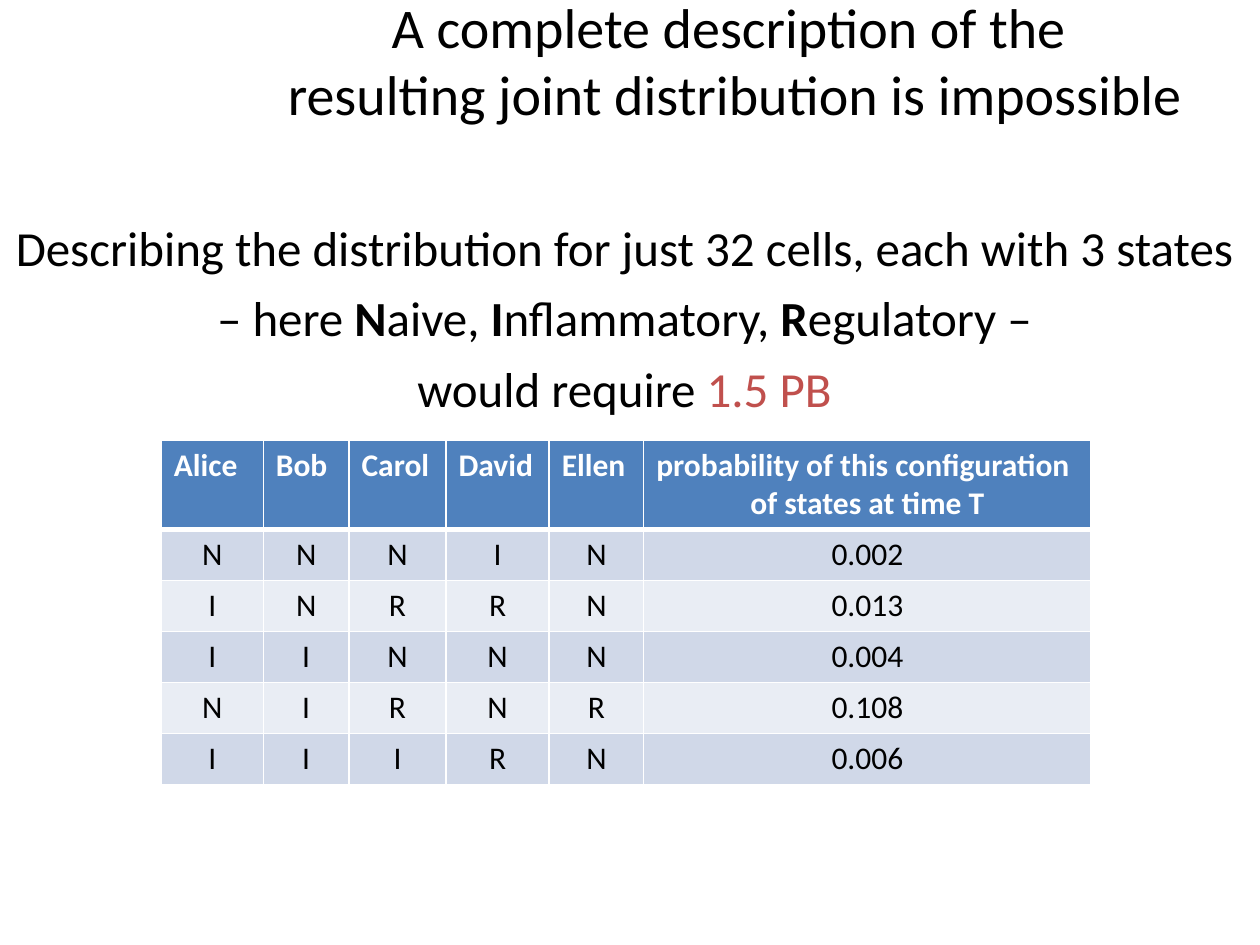
"""Build the slide on describing the joint distribution of cell states."""
import pptx
import pptx.dml.color
import pptx.enum.text
import pptx.oxml
import pptx.oxml.ns
import pptx.util

Inches, Pt = pptx.util.Inches, pptx.util.Pt
CENTER = pptx.enum.text.PP_ALIGN.CENTER
ANCHOR = pptx.enum.text.MSO_ANCHOR
BLACK, WHITE, RED = "000000", "FFFFFF", "C0504D"
HEADER_FILL, BAND_FILLS = "4F81BD", ("D0D8E8", "E9EDF4")

TITLE_LINES = ["A complete description of the ", "resulting joint distribution is impossible"]
BODY_LINES = [
    [("Describing the distribution for just 32 cells, each with 3 states ", False, BLACK)],
    [("– here ", False, BLACK), ("N", True, BLACK), ("aive,", False, BLACK),
     (" I", True, BLACK), ("nflammatory, ", False, BLACK), ("R", True, BLACK),
     ("egulatory – ", False, BLACK)],
    [("would require ", False, BLACK), ("1.5 PB ", False, RED)],
]
HEADERS = ["Alice", "Bob", "Carol", "David", "Ellen",
           "probability of this configuration\nof states at time T"]
CONFIGURATIONS = [
    ("NNNIN", "0.002"),
    ("INRRN", "0.013"),
    ("IINNN", "0.004"),
    ("NIRNR", "0.108"),
    ("IIIRN", "0.006"),
]
COLUMN_WIDTHS = [0.81, 0.68, 0.77, 0.82, 0.75, 3.55]
HEADER_HEIGHT, ROW_HEIGHT = 0.7, 0.4


def rgb(value):
    return pptx.dml.color.RGBColor.from_string(value)


def style(font, size, color, bold=False):
    font.name, font.size, font.bold = "Calibri", Pt(size), bold
    font.color.rgb = rgb(color)


def place(holder, left, top, width, height, anchor):
    holder.left, holder.top = Inches(left), Inches(top)
    holder.width, holder.height = Inches(width), Inches(height)
    frame = holder.text_frame
    frame.word_wrap = True
    frame.auto_size = pptx.enum.text.MSO_AUTO_SIZE.NONE
    frame.vertical_anchor = anchor
    return frame.paragraphs[0]


def add_borders(cell, bottom_width):
    properties = cell._tc.get_or_add_tcPr()
    widths = {"lnL": 1, "lnR": 1, "lnT": 1, "lnB": bottom_width}
    for index, (side, width) in enumerate(widths.items()):
        properties.insert(index, pptx.oxml.parse_xml(
            f'<a:{side} {pptx.oxml.ns.nsdecls("a")} w="{Pt(width)}"><a:solidFill>'
            f'<a:srgbClr val="{WHITE}"/></a:solidFill></a:{side}>'))


def fill_cell(cell, text, fill, color, is_header):
    cell.fill.solid()
    cell.fill.fore_color.rgb = rgb(fill)
    cell.text = text
    for index, paragraph in enumerate(cell.text_frame.paragraphs):
        style(paragraph.font, 18, color, is_header)
        if index or not is_header:
            paragraph.alignment = CENTER
    add_borders(cell, 3 if is_header else 1)


def add_title(slide):
    title = place(slide.shapes.title, 1.67, 0, 8.33, 0.94, ANCHOR.MIDDLE)
    title.text = "\v".join(TITLE_LINES)
    title.alignment = CENTER
    style(title.font, 32, BLACK)


def add_body(slide):
    body = place(slide.placeholders[1], 0, 1.58, 10, 1.86, ANCHOR.TOP)
    body.alignment, body.line_spacing, body.space_before = CENTER, 1.2, Pt(0)
    properties = body._p.get_or_add_pPr()
    properties.set("marL", "0")
    properties.set("indent", "0")
    properties.append(pptx.oxml.parse_xml(f'<a:buNone {pptx.oxml.ns.nsdecls("a")}/>'))
    style(body.font, 28, BLACK)
    for index, line in enumerate(BODY_LINES):
        if index:
            body.add_line_break()
        for text, bold, color in line:
            run = body.add_run()
            run.text = text
            style(run.font, 28, color, bold)


def add_probabilities(slide):
    rows = [HEADERS] + [[*states, chance] for states, chance in CONFIGURATIONS]
    height = HEADER_HEIGHT + ROW_HEIGHT * len(CONFIGURATIONS)
    table = slide.shapes.add_table(
        len(rows), len(HEADERS), Inches(1.28), Inches(3.49),
        Inches(sum(COLUMN_WIDTHS)), Inches(height)).table
    for column, width in zip(table.columns, COLUMN_WIDTHS):
        column.width = Inches(width)
    for r, row in enumerate(rows):
        is_header = r == 0
        table.rows[r].height = Inches(HEADER_HEIGHT if is_header else ROW_HEIGHT)
        fill = HEADER_FILL if is_header else BAND_FILLS[(r - 1) % 2]
        for c, text in enumerate(row):
            fill_cell(table.cell(r, c), text, fill, WHITE if is_header else BLACK, is_header)


def main():
    presentation = pptx.Presentation()
    presentation.slide_width, presentation.slide_height = Inches(10), Inches(7.5)
    slide = presentation.slides.add_slide(presentation.slide_layouts[1])
    add_title(slide)
    add_body(slide)
    add_probabilities(slide)
    presentation.save("out.pptx")


if __name__ == "__main__":
    main()
